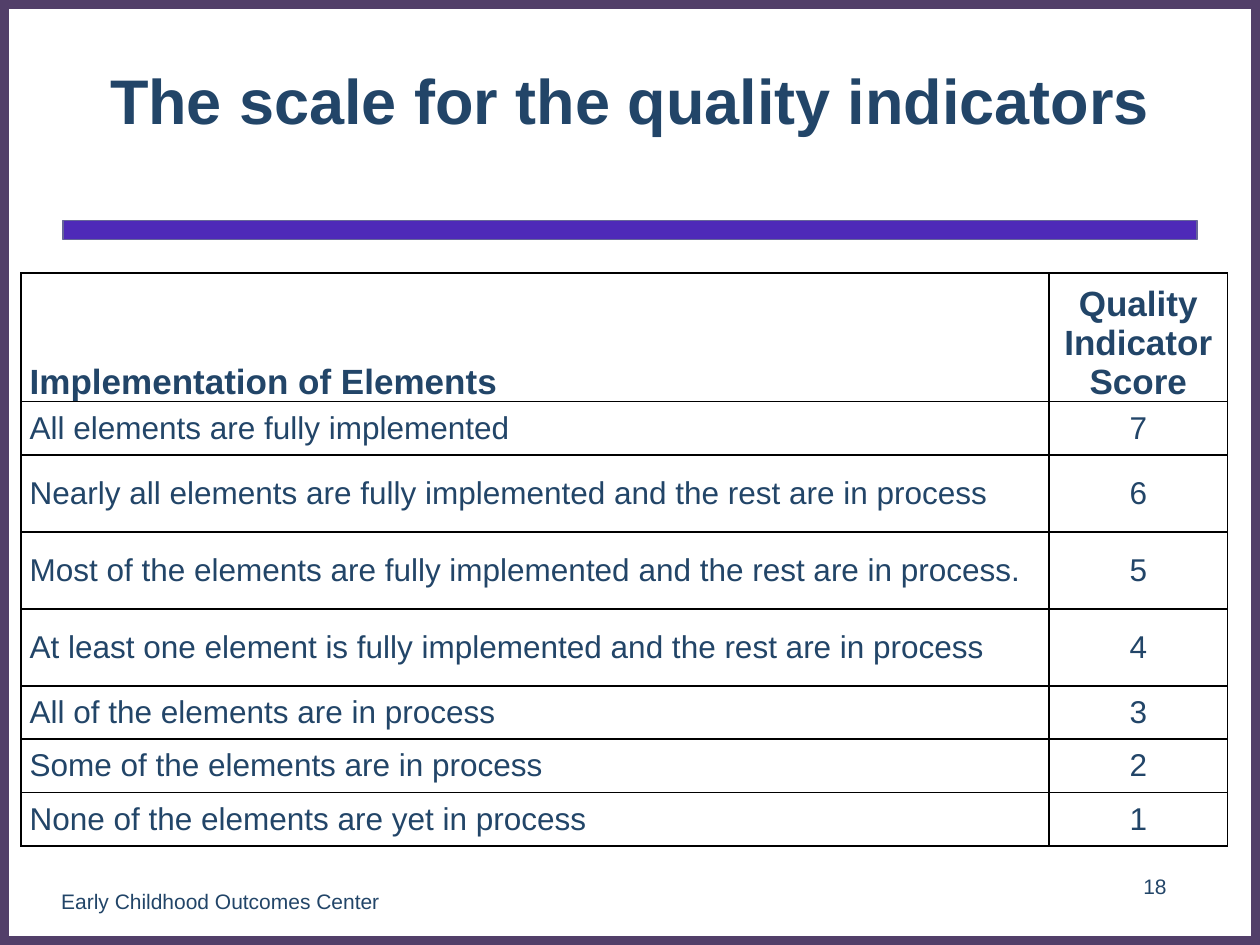
import pptx
import pptx.util
import pptx.dml.color
import pptx.enum.shapes
import pptx.enum.text
import pptx.oxml
import pptx.oxml.ns

Pt = pptx.util.Pt
ALIGN = pptx.enum.text.PP_ALIGN
ANCHOR = pptx.enum.text.MSO_ANCHOR

# Content
TITLE = "The scale for the quality indicators"
HEADER = ("Implementation of Elements", "Quality Indicator Score")
LEVELS = [
    ("All elements are fully implemented", 30.5),
    ("Nearly all elements are fully implemented and the rest are in process", 44),
    ("Most of the elements are fully implemented and the rest are in process.", 44),
    ("At least one element is fully implemented and the rest are in process", 44),
    ("All of the elements are in process", 30.5),
    ("Some of the elements are in process", 30.5),
    ("None of the elements are yet in process", 30.5),
]
FOOTERS = [
    ("18", (546, 492, 228, 29)),
    ("Early Childhood Outcomes Center", (12, 500.5, 228, 29)),
]
HEADER_HEIGHT = 73.5
COLUMN_WIDTHS = (587.5, 102)
TEXT_COLOR = "224568"


def color(value):
    return pptx.dml.color.RGBColor.from_string(value)


def place(shape, left, top, width, height):
    shape.left, shape.top = Pt(left), Pt(top)
    shape.width, shape.height = Pt(width), Pt(height)


def write(frame, text, size, bold=False, align=ALIGN.CENTER):
    frame.word_wrap = True
    paragraph = frame.paragraphs[0]
    paragraph.alignment = align
    run = paragraph.add_run()
    run.text = text
    run.font.name = "Arial"
    run.font.size = Pt(size)
    run.font.bold = bold
    run.font.color.rgb = color(TEXT_COLOR)


def add_rectangle(slide, box, line, weight, fill=None):
    shape = slide.shapes.add_shape(
        pptx.enum.shapes.MSO_SHAPE.RECTANGLE, *map(Pt, box))
    shape.shadow.inherit = False
    if fill:
        shape.fill.solid()
        shape.fill.fore_color.rgb = color(fill)
    else:
        shape.fill.background()
    shape.line.color.rgb = color(line)
    shape.line.width = Pt(weight)


def add_borders(cell):
    properties = cell._tc.get_or_add_tcPr()
    for index, side in enumerate(("lnL", "lnR", "lnT", "lnB")):
        properties.insert(index, pptx.oxml.parse_xml(
            f'<a:{side} {pptx.oxml.ns.nsdecls("a")} w="12700"><a:solidFill>'
            f'<a:srgbClr val="000000"/></a:solidFill></a:{side}>'))


def fill_cell(cell, text, size, bold, align, anchor):
    cell.fill.background()
    cell.margin_left = cell.margin_right = Pt(5)
    cell.margin_top = cell.margin_bottom = 0
    cell.vertical_anchor = anchor
    write(cell.text_frame, text, size, bold, align)
    add_borders(cell)


presentation = pptx.Presentation()
presentation.slide_width, presentation.slide_height = Pt(720), Pt(540)
slide = presentation.slides.add_slide(presentation.slide_layouts[5])

# Frame and rule
add_rectangle(slide, (0, 0, 720, 540), "523F69", 10)
add_rectangle(slide, (36, 126, 648, 11), "666699", 0.75, "4E2AB8")

# Title
title = slide.shapes.title
place(title, 42, 12, 636, 90)
title.text_frame.vertical_anchor = ANCHOR.MIDDLE
write(title.text_frame, TITLE, 36, bold=True)

# Page number and footer
for text, box in FOOTERS:
    frame = slide.shapes.add_textbox(*map(Pt, box)).text_frame
    frame.vertical_anchor = ANCHOR.MIDDLE
    write(frame, text, 12)

# Scale table, scored from the top level down to 1
rows = [HEADER] + [(text, str(len(LEVELS) - index))
                   for index, (text, _) in enumerate(LEVELS)]
heights = [HEADER_HEIGHT] + [height for _, height in LEVELS]
table = slide.shapes.add_table(
    len(rows), len(COLUMN_WIDTHS), Pt(12), Pt(156),
    Pt(sum(COLUMN_WIDTHS)), Pt(sum(heights))).table
table.horz_banding = False
for column, width in zip(table.columns, COLUMN_WIDTHS):
    column.width = Pt(width)
for row_index, (row, height) in enumerate(zip(rows, heights)):
    table.rows[row_index].height = Pt(height)
    is_header = row_index == 0
    for column_index, text in enumerate(row):
        fill_cell(table.cell(row_index, column_index), text,
                  20 if is_header else 18, is_header,
                  ALIGN.CENTER if column_index else ALIGN.LEFT,
                  ANCHOR.BOTTOM if is_header else ANCHOR.MIDDLE)

presentation.save("out.pptx")
